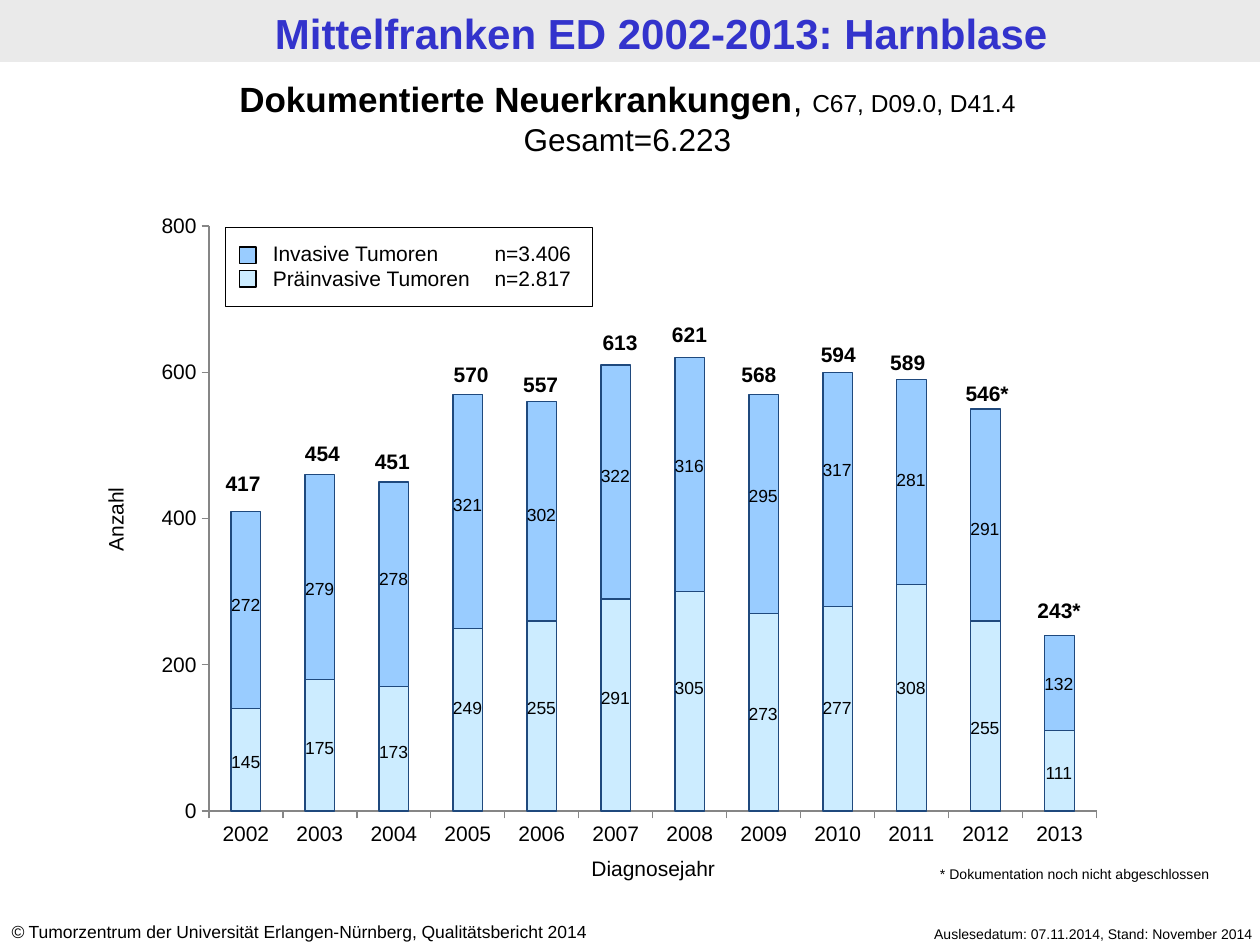
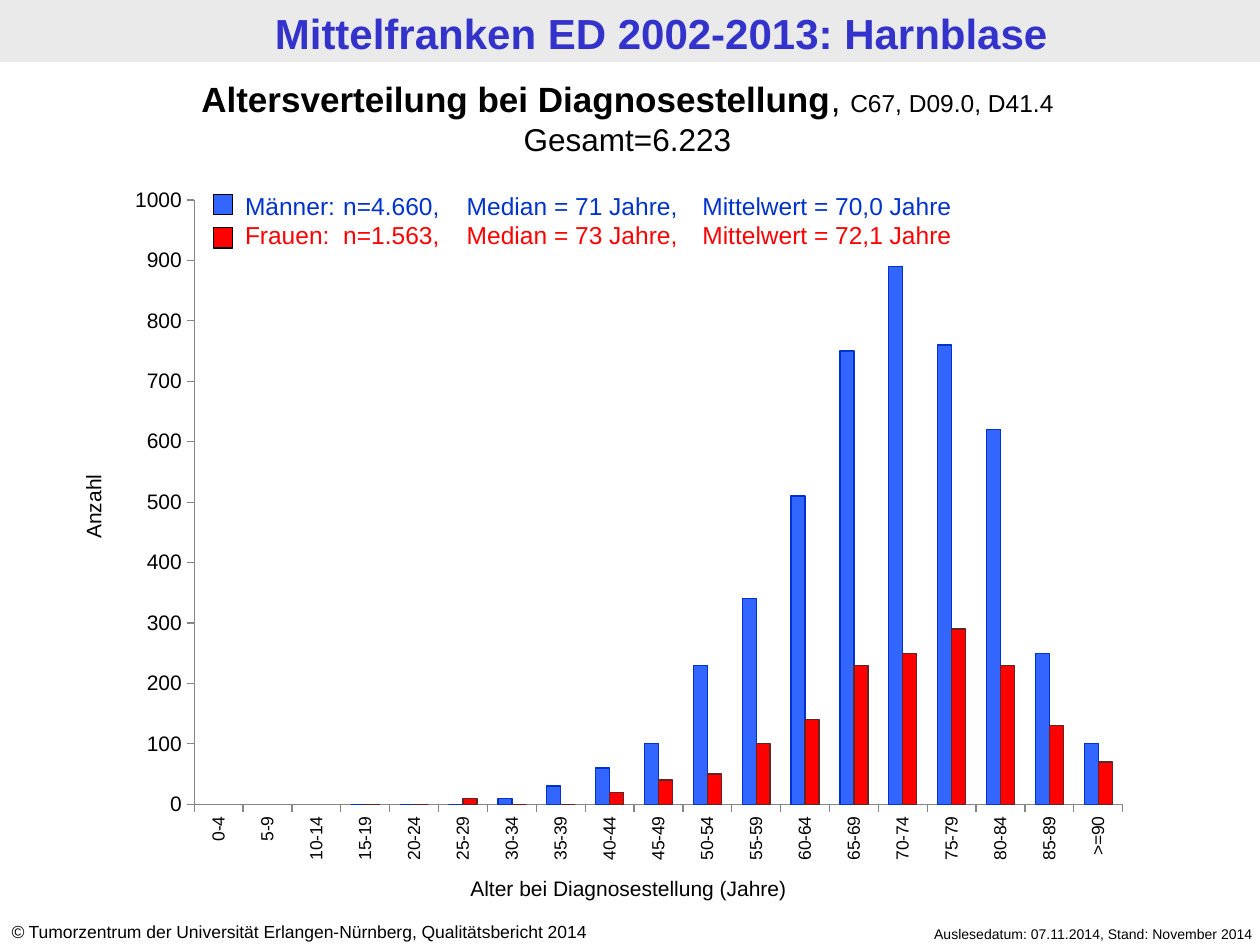
from lxml.etree import SubElement
from pptx import Presentation
from pptx.chart.data import CategoryChartData
from pptx.dml.color import RGBColor
from pptx.enum.chart import XL_CHART_TYPE as ChartType, XL_TICK_MARK as TickMark
from pptx.enum.shapes import MSO_SHAPE as Shape
from pptx.enum.text import MSO_ANCHOR as Anchor, MSO_AUTO_SIZE as AutoSize, PP_ALIGN as Align
from pptx.oxml.ns import qn
from pptx.util import Cm, Pt

FONT = "Arial"
BLACK = "000000"
BAND_GREY = "EAEAEA"
AXIS_GREY = "868686"
TITLE_BLUE = "3333CC"
INVASIVE, PREINVASIVE, BAR_EDGE = "99CCFF", "CCECFF", "1F497D"
MEN, MEN_EDGE = "3366FF", "0033CC"
WOMEN, WOMEN_EDGE = "FF0000", "632523"

NEW_CASES = [
    # year, preinvasive, invasive, mark, total left, total top, invasive top, preinvasive top
    ("2002", 145, 272, "", 4.1, 9.35, 11.84, 15.01),
    ("2003", 175, 279, "", 5.7, 8.76, 11.53, 14.73),
    ("2004", 173, 278, "", 7.11, 8.92, 11.33, 14.81),
    ("2005", 249, 321, "", 8.7, 7.16, 9.83, 13.92),
    ("2006", 255, 302, "", 10.1, 7.37, 10.03, 13.92),
    ("2007", 291, 322, "", 11.7, 6.52, 9.25, 13.72),
    ("2008", 305, 316, "", 13.1, 6.35, 9.04, 13.51),
    ("2009", 273, 295, "", 14.5, 7.16, 9.64, 14.05),
    ("2010", 277, 317, "", 16.1, 6.76, 9.12, 13.92),
    ("2011", 308, 281, "", 17.5, 6.92, 9.32, 13.51),
    ("2012", 255, 291, "*", 19.1, 7.54, 10.31, 14.33),
    ("2013", 111, 132, "*", 20.55, 11.91, 13.44, 15.24),
]
AGE_GROUPS = [f"{age}-{age + 4}" for age in range(0, 90, 5)] + [">=90"]
MEN_BY_AGE = [None, None, None, 0, 0, 0, 10, 30, 60, 100, 230, 340, 510, 750, 890, 760, 620, 250, 100]
WOMEN_BY_AGE = [None, None, None, 0, 0, 10, 0, 0, 20, 40, 50, 100, 140, 230, 250, 290, 230, 130, 70]


def color(value):
    return RGBColor.from_string(value)


def run(text, size=12, bold=False, italic=False, ink=BLACK):
    return text, size, bold, italic, ink


class Deck:
    def __init__(self):
        self.presentation = Presentation()
        self.presentation.slide_width = Cm(25.4)
        self.presentation.slide_height = Cm(19.05)
        self.layout = self.presentation.slide_layouts[5]
        self.slide = None

    def add_slide(self, heading):
        self.slide = self.presentation.slides.add_slide(self.layout)
        if len(self.presentation.slides) == 1:
            self.share_frame()
        title = self.slide.shapes.title
        title.left, title.top, title.width, title.height = map(Cm, (-0.1, 1.43, 25.5, 1.88))
        self.fill_frame(title.text_frame, [
            [run(heading, 20, bold=True), run(", ", 20), run("C67, D09.0, D41.4", 14)],
            [run("Gesamt=6.223", 18)],
        ], Align.CENTER, Anchor.MIDDLE)

    def share_frame(self):
        frame = [
            self.box(0, 0, 25.4, 1.25, fill=BAND_GREY),
            self.text(1.25, 0.04, 24.16, 1.24,
                      [[run("Mittelfranken ED 2002-2013: Harnblase", 24, bold=True, ink=TITLE_BLUE)]],
                      Align.CENTER, Anchor.MIDDLE),
            self.text(16.9, 18.52, 8.61, 0.61,
                      [[run("Auslesedatum: 07.11.2014, Stand: November 2014", 8)]], Align.RIGHT),
            self.text(-0.02, 18.43, 13.31, 0.69,
                      [[run("©", 10, italic=True),
                        run(" Tumorzentrum der Universität Erlangen-Nürnberg, Qualitätsbericht 2014", 10)]]),
        ]
        for number, shape in enumerate(frame, 20):
            shape.element.nvSpPr.cNvPr.set("id", str(number))
            self.layout.shapes.element.append(shape.element)

    def fill_frame(self, frame, paragraphs, align, anchor, inset=0.25, tabs=()):
        frame.word_wrap = True
        frame.auto_size = AutoSize.NONE
        frame.vertical_anchor = anchor
        frame.margin_left = frame.margin_right = Cm(inset)
        frame.margin_top = frame.margin_bottom = Cm(0.13)
        for index, runs in enumerate(paragraphs):
            paragraph = frame.add_paragraph() if index else frame.paragraphs[0]
            paragraph.alignment = align
            if tabs:
                stops = SubElement(paragraph._p.get_or_add_pPr(), qn("a:tabLst"))
                for stop in tabs:
                    SubElement(stops, qn("a:tab"), pos=str(Cm(stop)), algn="l")
            for text, size, bold, italic, ink in runs:
                piece = paragraph.add_run()
                piece.text = text
                font = piece.font
                font.name, font.size, font.bold, font.italic = FONT, Pt(size), bold, italic
                font.color.rgb = color(ink)

    def text(self, left, top, width, height, paragraphs, align=Align.LEFT,
             anchor=Anchor.TOP, inset=0.25, tabs=(), rotation=0):
        shape = self.slide.shapes.add_textbox(*map(Cm, (left, top, width, height)))
        shape.rotation = rotation
        self.fill_frame(shape.text_frame, paragraphs, align, anchor, inset, tabs)
        return shape

    def label(self, left, top, width, height, text, size=12, bold=False, rotation=0):
        return self.text(left, top, width, height, [[run(text, size, bold)]],
                         Align.CENTER, inset=0, rotation=rotation)

    def box(self, left, top, width, height, fill=None, line=None):
        shape = self.slide.shapes.add_shape(Shape.RECTANGLE, *map(Cm, (left, top, width, height)))
        shape.shadow.inherit = False
        self.paint(shape, fill, line)
        return shape

    def paint(self, target, fill, line):
        if fill:
            target.fill.solid()
            target.fill.fore_color.rgb = color(fill)
        else:
            target.fill.background()
        if line:
            target.line.color.rgb = color(line)
            target.line.width = Pt(0.75)
        else:
            target.line.fill.background()

    def column_chart(self, kind, place, plot_area, categories, series, maximum, step,
                     overlap, category_size=12, upright=False):
        data = CategoryChartData()
        data.categories = categories
        for name, values, _, _ in series:
            data.add_series(name, values)
        chart = self.slide.shapes.add_chart(kind, *map(Cm, place), data).chart
        chart.has_title = chart.has_legend = False
        chart.font.name, chart.font.size = FONT, Pt(12)
        chart.font.color.rgb = color(BLACK)
        plot = chart.plots[0]
        plot.gap_width, plot.overlap, plot.vary_by_categories = 150, overlap, False
        for drawn, (_, _, fill, line) in zip(plot.series, series):
            drawn.invert_if_negative = False
            self.paint(drawn.format, fill, line)
        for axis, size in ((chart.category_axis, category_size), (chart.value_axis, 12)):
            axis.has_major_gridlines = False
            axis.major_tick_mark, axis.minor_tick_mark = TickMark.OUTSIDE, TickMark.NONE
            axis.format.line.color.rgb = color(AXIS_GREY)
            axis.tick_labels.font.size = Pt(size)
            axis.tick_labels.font.name = FONT
        value_axis = chart.value_axis
        value_axis.minimum_scale, value_axis.maximum_scale, value_axis.major_unit = 0, maximum, step
        if upright:
            chart.element.xpath("//c:catAx/c:txPr/a:bodyPr")[0].set("rot", "-5400000")
        self.set_plot_area(chart, plot_area)

    def set_plot_area(self, chart, plot_area):
        area = chart.element.xpath("//c:plotArea")[0]
        for old in area.findall(qn("c:layout")):
            area.remove(old)
        layout = SubElement(area, qn("c:layout"))
        area.insert(0, layout)
        manual = SubElement(layout, qn("c:manualLayout"))
        settings = [("layoutTarget", "inner"), ("xMode", "edge"), ("yMode", "edge")]
        for tag, value in settings + list(zip("xywh", plot_area)):
            SubElement(manual, qn(f"c:{tag}"), val=str(value))


def add_new_cases(deck):
    deck.add_slide("Dokumentierte Neuerkrankungen")
    deck.column_chart(
        ChartType.COLUMN_STACKED, (2.92, 4.18, 19.58, 13.06), (0.066, 0.029, 0.914, 0.903),
        [row[0] for row in NEW_CASES],
        [("Präinvasive Tumoren", [round(row[1], -1) for row in NEW_CASES], PREINVASIVE, BAR_EDGE),
         ("Invasive Tumoren", [round(row[2], -1) for row in NEW_CASES], INVASIVE, BAR_EDGE)],
        800, 200, overlap=100)
    deck.label(10.31, 17.12, 5.72, 0.76, "Diagnosejahr")
    deck.label(0.77, 10.09, 3.1, 0.76, "Anzahl", rotation=270)
    deck.text(5.25, 4.72, 6.71, 1.8, [[run("Invasive Tumoren\tn=3.406")],
                                      [run("Präinvasive Tumoren\tn=2.817")]], tabs=[4.47])
    deck.box(4.55, 4.58, 7.39, 1.6, line=BLACK)
    for top, fill in ((4.98, INVASIVE), (5.46, PREINVASIVE)):
        deck.box(4.83, top, 0.33, 0.33, fill, BLACK)
    for index, row in enumerate(NEW_CASES):
        _, preinvasive, invasive, mark, total_left, total_top, invasive_top, preinvasive_top = row
        segment_left = 4.41 + 1.49 * index
        deck.label(total_left, total_top, 1.6, 0.76, f"{preinvasive + invasive}{mark}", bold=True)
        deck.label(segment_left, invasive_top, 1.09, 0.69, str(invasive), 10)
        deck.label(segment_left, preinvasive_top, 1.09, 0.69, str(preinvasive), 10)
    deck.text(18.7, 17.32, 6.3, 0.61, [[run("* Dokumentation noch nicht abgeschlossen", 8)]])


def add_age_distribution(deck):
    deck.add_slide("Altersverteilung bei Diagnosestellung")
    deck.column_chart(
        ChartType.COLUMN_CLUSTERED, (2.32, 3.54, 20.73, 14.1), (0.077, 0.035, 0.903, 0.864),
        AGE_GROUPS,
        [("Männer", MEN_BY_AGE, MEN, MEN_EDGE), ("Frauen", WOMEN_BY_AGE, WOMEN, WOMEN_EDGE)],
        1000, 100, overlap=0, category_size=10, upright=True)
    deck.text(4.69, 3.72, 17.4, 1.45, [
        [run("Männer:\tn=4.660,\tMedian = 71 Jahre,\tMittelwert = 70,0 Jahre", 14, ink=MEN_EDGE)],
        [run("Frauen:\tn=1.563,\tMedian = 73 Jahre,\tMittelwert = 72,1 Jahre", 14, ink=WOMEN)],
    ], tabs=[1.98, 4.47, 9.22])
    deck.label(8.77, 17.53, 7.8, 0.76, "Alter bei Diagnosestellung (Jahre)")
    for top, fill in ((3.92, MEN), (4.59, WOMEN)):
        deck.box(4.31, top, 0.38, 0.41, fill, BLACK)
    deck.label(0.32, 9.83, 3.1, 0.76, "Anzahl", rotation=270)


def main():
    deck = Deck()
    add_new_cases(deck)
    add_age_distribution(deck)
    deck.presentation.save("out.pptx")


if __name__ == "__main__":
    main()
